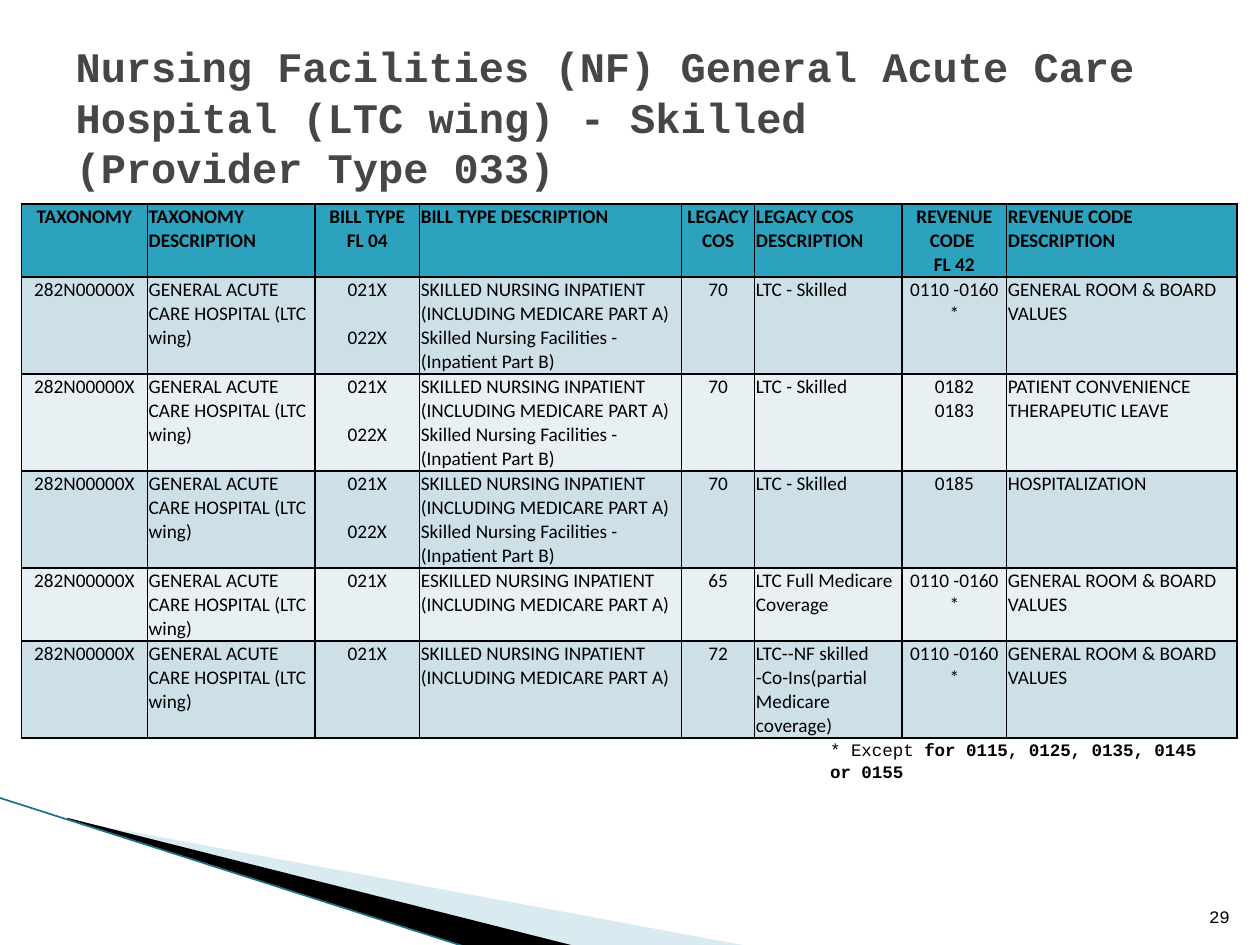
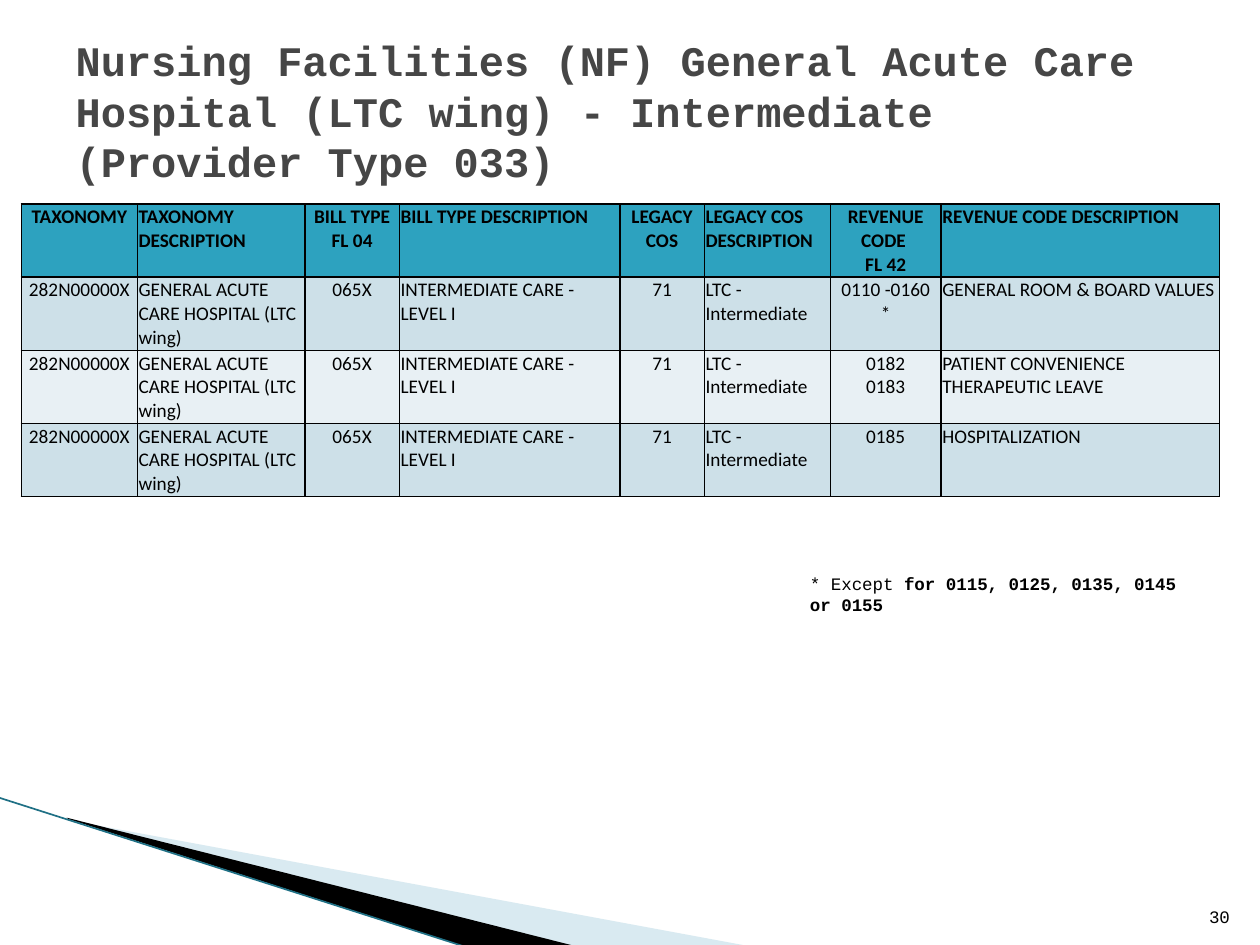
from lxml.etree import SubElement
from pptx import Presentation
from pptx.dml.color import RGBColor
from pptx.enum.shapes import MSO_CONNECTOR as LINK
from pptx.enum.text import MSO_ANCHOR as ANCHOR, MSO_AUTO_SIZE as FIT, PP_ALIGN as ALIGN
from pptx.oxml.ns import qn
from pptx.util import Inches, Pt

HUES = {
    "title": "464646", "text": "000000", "head": "2DA2BF",
    "odd": "CDE0E8", "even": "E8F0F4",
    "pale": "A0CBDC", "dark": "000000", "edge": "1F7085",
}
MONO, SANS = "Courier New", "Calibri"


def style(para, face, size, hue="text", bold=False, align=ALIGN.LEFT):
    para.alignment = align
    for run in para.runs:
        font = run.font
        font.name, font.size, font.bold = face, Pt(size), bold
        font.color.rgb = RGBColor.from_string(HUES[hue])


def frame(cell):
    """Give a table cell thin black borders on all four sides."""
    props = cell._tc.get_or_add_tcPr()
    for side in ("lnL", "lnR", "lnT", "lnB"):
        line = SubElement(props, qn(f"a:{side}"), w=str(Pt(1)))
        fill = SubElement(line, qn("a:solidFill"))
        SubElement(fill, qn("a:srgbClr"), val=HUES["text"])


HEADS = ["TAXONOMY", "TAXONOMY DESCRIPTION", "BILL TYPE\vFL 04",
         "BILL TYPE DESCRIPTION", "LEGACY COS", "LEGACY COS DESCRIPTION",
         "REVENUE CODE \vFL 42", "REVENUE CODE DESCRIPTION"]
TAXON = ["282N00000X", "GENERAL ACUTE CARE HOSPITAL (LTC wing)"]
ROOM = ["0110 -0160\v*", "GENERAL ROOM & BOARD VALUES"]
LEAVE = ["0182\v0183", "PATIENT CONVENIENCE\vTHERAPEUTIC LEAVE"]
STAY = ["0185", "HOSPITALIZATION"]
NURSE = "SKILLED NURSING INPATIENT (INCLUDING MEDICARE PART A)"
BOTH = ["021X\n022X",
        NURSE + "\vSkilled Nursing Facilities - (Inpatient Part B)",
        "70", "LTC - Skilled"]
INTER = ["065X", "INTERMEDIATE CARE - LEVEL I", "71", "LTC - Intermediate"]
LOW, TALL = 0.58, 0.77

PAGES = [
    {
        "kind": "Skilled", "number": "29", "top": 0.3, "note": (6.49, 5.82),
        "cols": [1, 1.33, 0.83, 2.08, 0.58, 1.17, 0.83, 1.83],
        "heights": [LOW, TALL, TALL, TALL, LOW, TALL],
        "rows": [
            BOTH + ROOM,
            BOTH + LEAVE,
            BOTH + STAY,
            ["021X", "E" + NURSE, "65", "LTC Full Medicare Coverage"] + ROOM,
            ["021X", NURSE, "72",
             "LTC--NF skilled -Co-Ins(partial Medicare coverage)"] + ROOM,
        ],
    },
    {
        "kind": "Intermediate", "number": "30", "top": 0.25, "note": (6.33, 4.5),
        "cols": [0.92, 1.33, 0.75, 1.75, 0.67, 1, 0.88, 2.21],
        "heights": [LOW] * 4,
        "rows": [INTER + ROOM, INTER + LEAVE, INTER + STAY],
    },
]

deck = Presentation()
deck.slide_width, deck.slide_height = Inches(10), Inches(7.5)
layout = deck.slide_layouts[5]

for page in PAGES:
    slide = deck.slides.add_slide(layout)
    shapes = slide.shapes

    title = shapes.title
    title.left, title.top = Inches(0.5), Inches(page["top"])
    title.width, title.height = Inches(9), Inches(1.25)
    text = title.text_frame
    text.text = ("Nursing Facilities (NF) General Acute Care Hospital (LTC wing) - "
                 f"{page['kind']} \v(Provider Type 033)")
    text.auto_size, text.vertical_anchor = FIT.NONE, ANCHOR.MIDDLE
    style(text.paragraphs[0], MONO, 24, "title", True)

    rows = [HEADS] + [TAXON + row for row in page["rows"]]
    cols, heights = page["cols"], page["heights"]
    table = shapes.add_table(
        len(rows), len(cols), Inches(0.17), Inches(1.62),
        Inches(sum(cols)), Inches(sum(heights))).table
    for col, width in zip(table.columns, cols):
        col.width = Inches(width)
    for r, row in enumerate(rows):
        table.rows[r].height = Inches(heights[r])
        hue = "head" if r == 0 else "odd" if r % 2 else "even"
        for c, words in enumerate(row):
            cell = table.cell(r, c)
            frame(cell)
            cell.fill.solid()
            cell.fill.fore_color.rgb = RGBColor.from_string(HUES[hue])
            cell.margin_left = cell.margin_right = cell.margin_top = Inches(0.01)
            cell.margin_bottom = 0
            cell.text_frame.text = words
            align = ALIGN.LEFT if c % 2 else ALIGN.CENTER
            for i, para in enumerate(cell.text_frame.paragraphs):
                style(para, SANS, 11, bold=r == 0, align=align)
                if i:
                    para.space_before = Pt(13.4)

    number = shapes.add_textbox(Inches(9.46), Inches(7.01), Inches(0.4), Inches(0.4))
    text = number.text_frame
    text.text = page["number"]
    text.word_wrap, text.vertical_anchor = True, ANCHOR.BOTTOM
    style(text.paragraphs[0], MONO, 10, align=ALIGN.RIGHT)

    left, top = page["note"]
    note = shapes.add_textbox(Inches(left), Inches(top), Inches(3.33), Inches(0.43))
    text = note.text_frame
    text.word_wrap, text.auto_size = True, FIT.SHAPE_TO_FIT_TEXT
    para = text.paragraphs[0]
    for words in ("* Except ", "for 0115, 0125, 0135, 0145 or 0155"):
        para.add_run().text = words
    style(para, MONO, 10)
    para.runs[1].font.bold = True

# The corner wedges are drawn once, then moved to the master behind everything.
WEDGES = [
    ("pale", [(0.55, 6.51), (5.95, 7.51), (4.56, 7.51), (0.55, 6.5)]),
    ("dark", [(0.53, 6.49), (4.57, 7.51), (3.72, 7.52), (0.54, 6.5)]),
]
corner = []
for hue, points in WEDGES:
    spots = [(Inches(x), Inches(y)) for x, y in points]
    path = shapes.build_freeform(*spots[0])
    path.add_line_segments(spots[1:])
    wedge = path.convert_to_shape()
    wedge.shadow.inherit = False
    wedge.fill.solid()
    wedge.fill.fore_color.rgb = RGBColor.from_string(HUES[hue])
    wedge.line.fill.background()
    if hue == "pale":
        tint = wedge.element.spPr.find(".//" + qn("a:srgbClr"))
        SubElement(tint, qn("a:alpha"), val="40000")
    corner.append(wedge)

edge = shapes.add_connector(
    LINK.STRAIGHT, Inches(-0.01), Inches(6.33), Inches(3.71), Inches(7.52))
edge.line.width = Pt(0.95)
edge.line.color.rgb = RGBColor.from_string(HUES["edge"])
SubElement(edge.element.spPr, qn("a:effectLst"))
corner.append(edge)

tree = deck.slide_master.shapes.element
for i, part in enumerate(corner):
    part.element.find(".//" + qn("p:cNvPr")).set("id", str(50 + i))
    tree.insert(2 + i, part.element)

deck.save("out.pptx")
